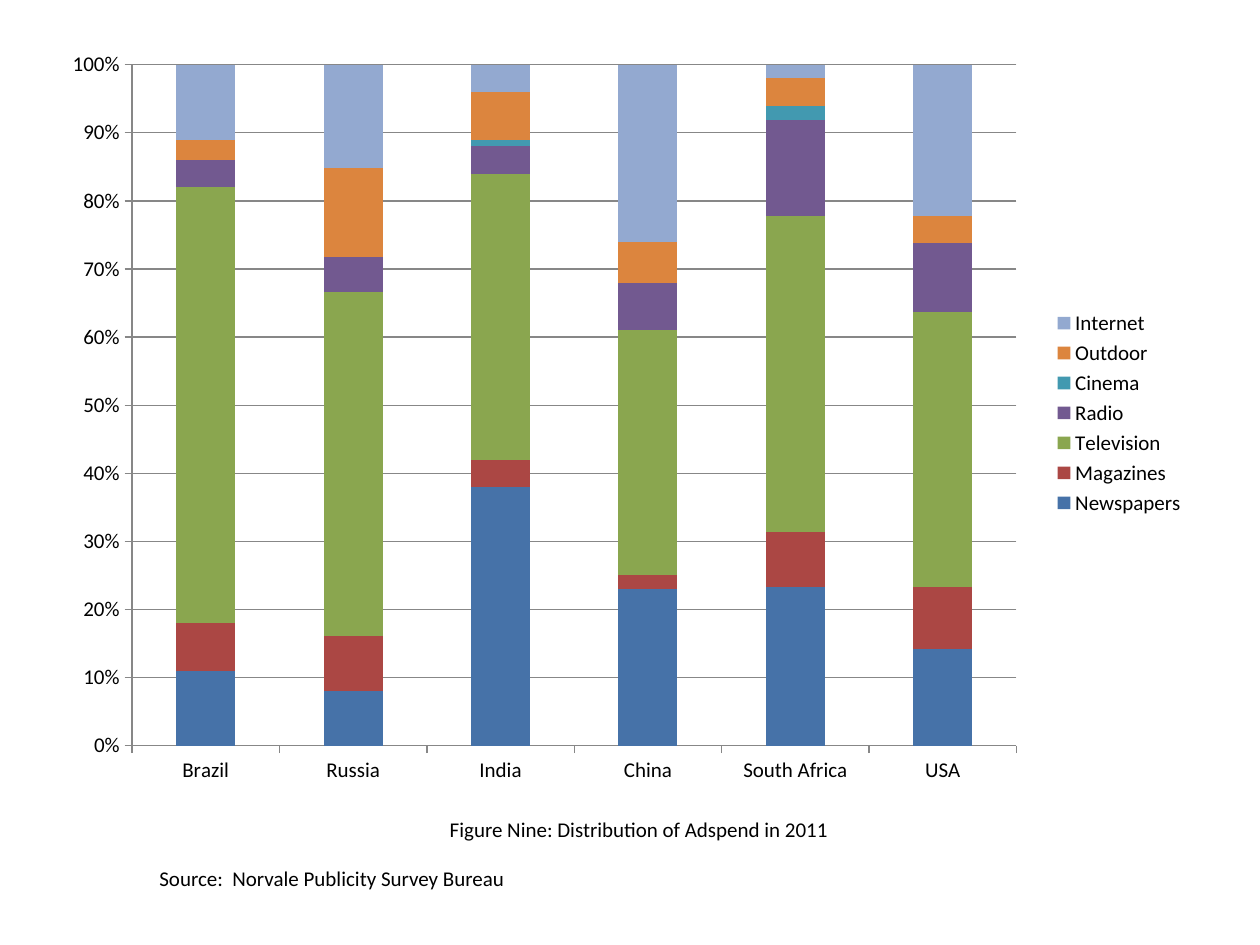
"""Build the slide on the distribution of adspend in 2011."""
from lxml import etree
from pptx import Presentation
from pptx.chart.data import CategoryChartData
from pptx.dml.color import RGBColor
from pptx.enum.chart import XL_CHART_TYPE, XL_LEGEND_POSITION, XL_TICK_MARK
from pptx.enum.text import MSO_ANCHOR, PP_ALIGN
from pptx.oxml.ns import qn
from pptx.util import Pt

STACK = XL_CHART_TYPE.COLUMN_STACKED_100
RIGHT = XL_LEGEND_POSITION.RIGHT
OUT = XL_TICK_MARK.OUTSIDE
LEFT, CENTER = PP_ALIGN.LEFT, PP_ALIGN.CENTER
TOP, MIDDLE = MSO_ANCHOR.TOP, MSO_ANCHOR.MIDDLE
PX = 914400 // 126

BLACK = RGBColor(0x00, 0x00, 0x00)
GRAY = RGBColor(0x87, 0x87, 0x87)
BLUE = RGBColor(0x46, 0x72, 0xA8)
RED = RGBColor(0xAB, 0x47, 0x44)
GREEN = RGBColor(0x8A, 0xA6, 0x4F)
PURPLE = RGBColor(0x72, 0x59, 0x90)
TEAL = RGBColor(0x42, 0x99, 0xB0)
ORANGE = RGBColor(0xDC, 0x85, 0x3E)
PALE = RGBColor(0x93, 0xA9, 0xD0)

LANDS = ["Brazil", "Russia", "India", "China", "South Africa", "USA"]
MEDIA = [
    ("Newspapers", BLUE, [11, 8, 38, 23, 23, 14]),
    ("Magazines", RED, [7, 8, 4, 2, 8, 9]),
    ("Television", GREEN, [64, 50, 42, 36, 46, 40]),
    ("Radio", PURPLE, [4, 5, 4, 7, 14, 10]),
    ("Cinema", TEAL, [0, 0, 1, None, 2, 0]),
    ("Outdoor", ORANGE, [3, 13, 7, 6, 4, 4]),
    ("Internet", PALE, [11, 15, 4, 26, 2, 22]),
]
PLOT = {"layoutTarget": "inner", "xMode": "edge", "yMode": "edge",
        "x": 0.06, "y": 0.05, "w": 0.78, "h": 0.88}


class Deck:
    """Hold the text style and the current slide."""

    def __init__(self):
        self.prs = Presentation()
        self.prs.slide_width, self.prs.slide_height = 1260 * PX, 945 * PX
        self.slide = self.prs.slides.add_slide(self.prs.slide_layouts[6])
        self.style = {"name": "Calibri", "size": Pt(12), "bold": False}

    def font(self, font):
        for key, value in self.style.items():
            setattr(font, key, value)
        font.color.rgb = BLACK

    def text(self, words, box, align=LEFT, anchor=TOP):
        frame = self.slide.shapes.add_textbox(*(n * PX for n in box)).text_frame
        for key, value in {"word_wrap": True, "vertical_anchor": anchor}.items():
            setattr(frame, key, value)
        para = frame.paragraphs[0]
        para.alignment = align
        run = para.add_run()
        run.text = words
        self.font(run.font)

    def line(self, line):
        line.color.rgb = GRAY
        line.width = Pt(0.75)

    def place(self, chart, spots):
        area = chart.element.find(".//" + qn("c:plotArea"))
        for old in area.findall(qn("c:layout")):
            area.remove(old)
        layout = etree.Element(qn("c:layout"))
        area.insert(0, layout)
        manual = etree.SubElement(layout, qn("c:manualLayout"))
        for key, value in spots.items():
            etree.SubElement(manual, qn("c:" + key)).set("val", str(value))

    def chart(self, cats, rows, box, spots):
        data = CategoryChartData()
        data.categories = cats
        for name, _, values in rows:
            data.add_series(name, values)
        frame = self.slide.shapes.add_chart(STACK, *(n * PX for n in box), data)
        chart = frame.chart
        self.font(chart.font)
        chart.has_title = False
        chart.has_legend = True
        for key, value in {"position": RIGHT, "include_in_layout": False}.items():
            setattr(chart.legend, key, value)
        self.font(chart.legend.font)
        for axis in (chart.category_axis, chart.value_axis):
            axis.major_tick_mark = OUT
            self.line(axis.format.line)
            self.font(axis.tick_labels.font)
        grid = chart.value_axis
        grid.has_major_gridlines = True
        self.line(grid.major_gridlines.format.line)
        labels = grid.tick_labels
        for key, value in {"number_format": "0%", "number_format_is_linked": False}.items():
            setattr(labels, key, value)
        bars = chart.plots[0]
        for key, value in {"gap_width": 150, "overlap": 100, "vary_by_categories": False}.items():
            setattr(bars, key, value)
        for part, (_, color, _) in zip(bars.series, rows):
            part.format.fill.solid()
            part.format.fill.fore_color.rgb = color
        self.place(chart, spots)


def main():
    deck = Deck()
    deck.chart(LANDS, MEDIA, (64, 26, 1134, 774), PLOT)
    deck.text("Figure Nine: Distribution of Adspend in 2011", (72, 799, 1134, 60), CENTER, MIDDLE)
    deck.text("Source:  Norvale Publicity Survey Bureau", (147, 859, 745, 38))
    deck.prs.save("out.pptx")


if __name__ == "__main__":
    main()
